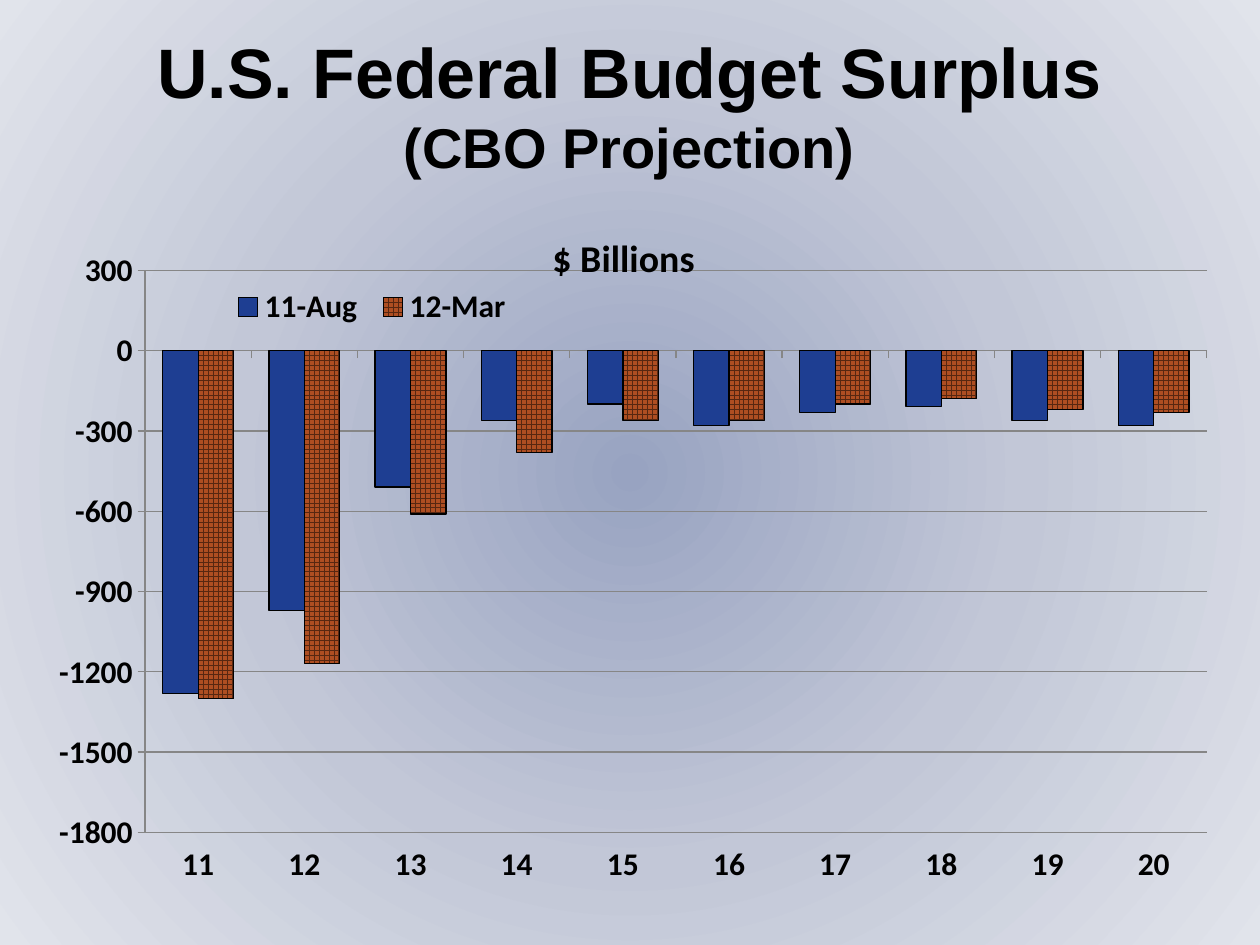
from dataclasses import dataclass

from lxml import etree
from pptx import Presentation
from pptx import util as u
from pptx.chart.data import CategoryChartData
from pptx.dml.color import RGBColor
from pptx.enum import chart as ch
from pptx.enum import dml, text
from pptx.oxml import parse_xml
from pptx.oxml.ns import nsdecls, qn

WIDTH, HEIGHT = u.Inches(10), u.Inches(7.5)
MARGIN, CONTENT_WIDTH = 0.025, 0.949  # shares of the slide width


@dataclass(frozen=True)
class Theme:
    ink: str = "000000"
    grid: str = "868686"
    background: tuple = ((0, "98A3C1"), (50, "C2C7D7"), (100, "E1E4EB"))
    title_font: str = "Arial"
    chart_font: str = "Calibri"
    title_sizes: tuple = (40, 32)
    chart_size: float = 18
    chart_title_size: float = 21.6
    line_width: float = 0.75


@dataclass(frozen=True)
class Projection:
    name: str
    values: tuple
    color: str
    pattern_color: str = ""


THEME = Theme()
TITLE_LINES = ("U.S. Federal Budget Surplus", "(CBO Projection)")
YEARS = [str(year) for year in range(11, 21)]
PROJECTIONS = (
    Projection("11-Aug", (-1280, -970, -510, -260, -200, -280, -230, -210, -260, -280), "1E3E92"),
    Projection("12-Mar", (-1300, -1170, -610, -380, -260, -260, -200, -180, -220, -230),
               "AE4E22", "572711"),
)


def rgb(value: str) -> RGBColor:
    return RGBColor.from_string(value)


def style_font(font, name: str, size: float) -> None:
    font.name, font.size, font.bold = name, u.Pt(size), True
    font.color.rgb = rgb(THEME.ink)


def style_line(line, color: str) -> None:
    line.color.rgb = rgb(color)
    line.width = u.Pt(THEME.line_width)


def set_radial_background(slide) -> None:
    slide.background.fill.gradient()
    old = slide.element.find(".//" + qn("a:gradFill"))
    stops = "".join(
        f'<a:gs pos="{share * 1000}"><a:srgbClr val="{color}"/></a:gs>'
        for share, color in THEME.background)
    gradient = parse_xml(
        f'<a:gradFill {nsdecls("a")} rotWithShape="1"><a:gsLst>{stops}</a:gsLst>'
        '<a:path path="circle"><a:fillToRect l="50000" t="50000" r="50000" b="50000"/>'
        '</a:path></a:gradFill>')
    old.getparent().replace(old, gradient)


def add_title(slide) -> None:
    title = slide.shapes.title
    title.left, title.top = int(WIDTH * MARGIN), int(HEIGHT * 0.044)
    title.width, title.height = int(WIDTH * CONTENT_WIDTH), u.Inches(1)
    frame = title.text_frame
    frame.auto_size = text.MSO_AUTO_SIZE.NONE
    frame.vertical_anchor = text.MSO_ANCHOR.MIDDLE
    frame.text = "\n".join(TITLE_LINES)
    for paragraph, size in zip(frame.paragraphs, THEME.title_sizes):
        paragraph.alignment = text.PP_ALIGN.CENTER
        paragraph.space_before = u.Pt(0)
        style_font(paragraph.font, THEME.title_font, size)


def set_layout(element, index: int, inner: bool = False, **shares: float) -> None:
    """Place a chart part by shares (x, y, w, h) of the chart's size."""
    for old in element.findall(qn("c:layout")):
        element.remove(old)
    layout = etree.Element(qn("c:layout"))
    manual = etree.SubElement(layout, qn("c:manualLayout"))
    if inner:
        etree.SubElement(manual, qn("c:layoutTarget"), val="inner")
    for key in ("x", "y"):
        etree.SubElement(manual, qn(f"c:{key}Mode"), val="edge")
    for key, share in shares.items():
        etree.SubElement(manual, qn(f"c:{key}"), val=str(share))
    element.insert(index, layout)


def style_series(series, projection: Projection) -> None:
    fill = series.format.fill
    if projection.pattern_color:
        fill.patterned()
        fill.pattern = dml.MSO_PATTERN.LARGE_GRID
        fill.fore_color.rgb = rgb(projection.pattern_color)
        fill.back_color.rgb = rgb(projection.color)
    else:
        fill.solid()
        fill.fore_color.rgb = rgb(projection.color)
    series.invert_if_negative = False
    style_line(series.format.line, THEME.ink)


def style_axes(chart) -> None:
    for axis in (chart.category_axis, chart.value_axis):
        axis.major_tick_mark = ch.XL_TICK_MARK.OUTSIDE
        axis.minor_tick_mark = ch.XL_TICK_MARK.NONE
        style_line(axis.format.line, THEME.grid)
    chart.category_axis.tick_label_position = ch.XL_TICK_LABEL_POSITION.LOW
    value_axis = chart.value_axis
    value_axis.minimum_scale, value_axis.maximum_scale = -1800, 300
    value_axis.major_unit = 300
    value_axis.has_major_gridlines = True
    style_line(value_axis.major_gridlines.format.line, THEME.grid)


def add_budget_chart(slide) -> None:
    data = CategoryChartData()
    data.categories = YEARS
    for projection in PROJECTIONS:
        data.add_series(projection.name, projection.values)
    chart = slide.shapes.add_chart(
        ch.XL_CHART_TYPE.COLUMN_CLUSTERED, int(WIDTH * MARGIN), int(HEIGHT * 0.2),
        int(WIDTH * CONTENT_WIDTH), int(HEIGHT * 0.755), data).chart
    style_font(chart.font, THEME.chart_font, THEME.chart_size)

    chart.has_title = True
    title = chart.chart_title
    title.text_frame.text = "$ Billions"
    style_font(title.text_frame.paragraphs[0].font, THEME.chart_font, THEME.chart_title_size)
    title.include_in_layout = False
    set_layout(title._element, 1, x=0.43, y=0.05)

    chart.has_legend = True
    chart.legend.position = ch.XL_LEGEND_POSITION.TOP
    chart.legend.include_in_layout = False
    set_layout(chart.legend._element, 1, x=0.16, y=0.13, w=0.25, h=0.07)

    plot = chart.plots[0]
    plot.gap_width, plot.overlap, plot.vary_by_categories = 100, 0, False
    for series, projection in zip(plot.series, PROJECTIONS):
        style_series(series, projection)
    style_axes(chart)
    plot_area = chart.element.find(".//" + qn("c:plotArea"))
    set_layout(plot_area, 0, inner=True, x=0.095, y=0.114, w=0.888, h=0.788)


def main() -> None:
    presentation = Presentation()
    presentation.slide_width, presentation.slide_height = WIDTH, HEIGHT
    slide = presentation.slides.add_slide(presentation.slide_layouts.get_by_name("Title Only"))
    set_radial_background(slide)
    add_title(slide)
    add_budget_chart(slide)
    presentation.save("out.pptx")


if __name__ == "__main__":
    main()
